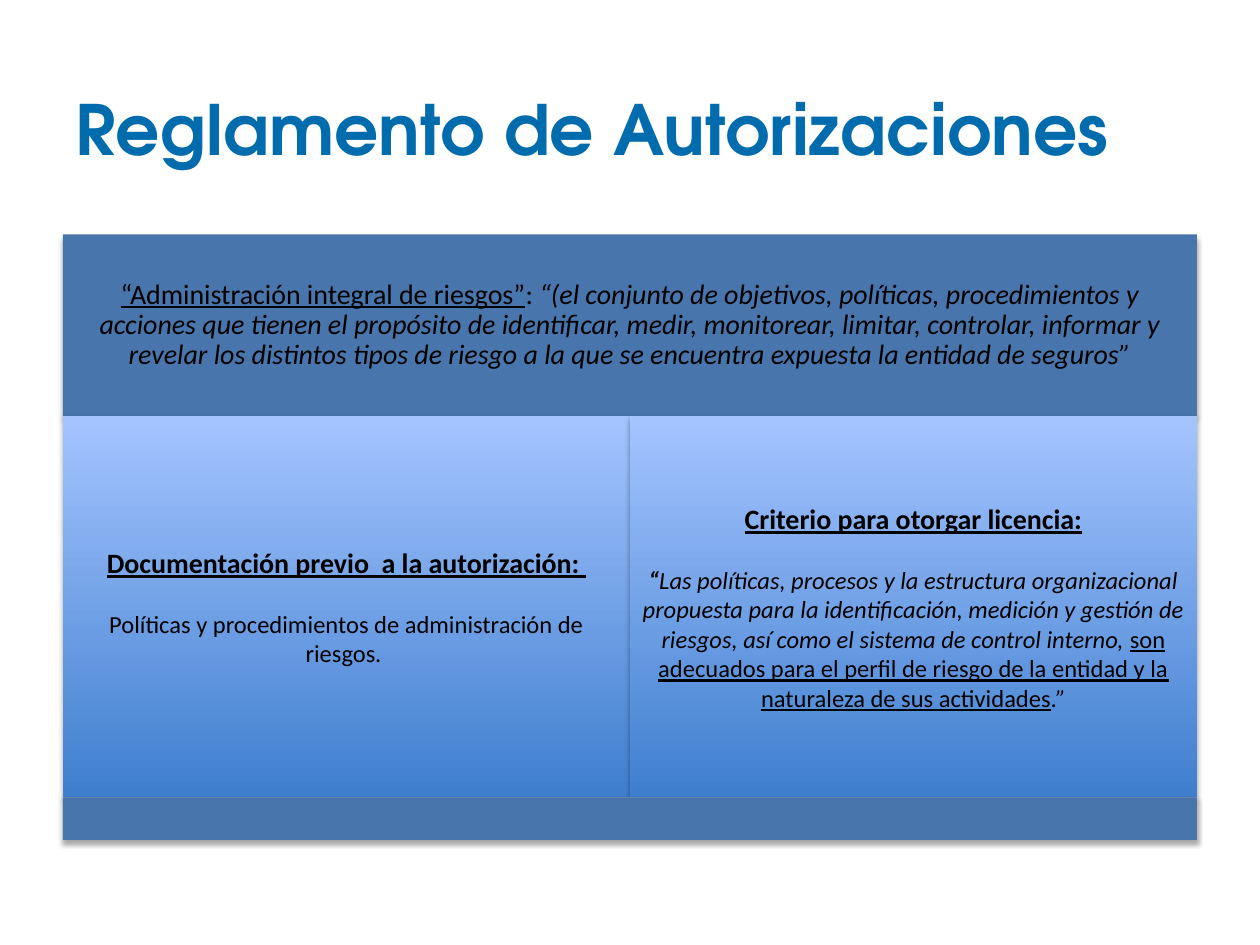
from lxml import etree
from pptx import Presentation
from pptx.dml.color import RGBColor
from pptx.enum import shapes, text
from pptx.oxml import ns
from pptx.util import Pt

COLORS = {"title": "006BAD", "band": "4875AC", "text": "000000",
          "dark": "3F7FCE", "light": "A4C4FF"}
LEFT, WIDTH = 36, 648
HALF = WIDTH / 2
TOP, HEAD_H, BODY_H, FOOT_H = 134, 103.7, 218, 24.3


def rgb(name):
    return RGBColor.from_string(COLORS[name])


def add_runs(p, runs):
    for words, fmt in runs:
        r = p.add_run()
        r.text = words
        r.font.name = "Calibri"
        r.font.color.rgb = rgb("text")
        for key, value in fmt.items():
            setattr(r.font, key, value)


prs = Presentation()
prs.slide_width, prs.slide_height = Pt(720), Pt(540)
s = prs.slides.add_slide(prs.slide_layouts[5])

# Title
title = s.shapes.title
title.left, title.top, title.width, title.height = Pt(36), Pt(21), Pt(648), Pt(104)
tf = title.text_frame
tf.vertical_anchor = text.MSO_ANCHOR.MIDDLE
p = tf.paragraphs[0]
p.alignment = text.PP_ALIGN.LEFT
r = p.add_run()
r.text = "Reglamento de Autorizaciones"
r.font.color.rgb = rgb("title")
for key, value in {"name": "TeX Gyre Adventor", "size": Pt(39.6), "bold": True}.items():
    setattr(r.font, key, value)

# Run formats
head = {"size": Pt(16), "bold": True, "underline": True}
plain16, plain14 = {"size": Pt(16)}, {"size": Pt(14)}
under16, under14 = {**plain16, "underline": True}, {**plain14, "underline": True}
italic16, italic14 = {**plain16, "italic": True}, {**plain14, "italic": True}

definition = [[
    ("“Administración integral de riesgos”", under16),
    (": ", plain16),
    ("“(el conjunto de objetivos, políticas, procedimientos y acciones que tienen "
     "el propósito de identificar, medir, monitorear, limitar, controlar, informar y "
     "revelar los distintos tipos de riesgo a la que se encuentra expuesta la entidad "
     "de seguros”", italic16),
]]
documents = [
    [("Documentación previo  a la autorización: ", head)],
    [("Políticas y procedimientos de administración de riesgos", plain14),
     (". ", italic14)],
]
criterion = [
    [("Criterio para otorgar licencia:", head)],
    [("“", {**italic14, "bold": True}),
     ("Las políticas, procesos y la estructura organizacional propuesta para la "
      "identificación, medición y gestión de riesgos, así como el sistema de control "
      "interno, ", italic14),
     ("son adecuados para el perfil de riesgo de la entidad y la naturaleza de sus "
      "actividades", under14),
     (".”", italic14)],
]

# Panels: header band, two gradient columns, footer band
body_top = TOP + HEAD_H
panels = [
    (LEFT, TOP, WIDTH, HEAD_H, "band", definition),
    (LEFT, body_top, HALF, BODY_H, "gradient", documents),
    (LEFT + HALF, body_top, HALF, BODY_H, "gradient", criterion),
    (LEFT, body_top + BODY_H, WIDTH, FOOT_H, "band", []),
]
for x, y, w, h, style, paragraphs in panels:
    sp = s.shapes.add_shape(shapes.MSO_SHAPE.RECTANGLE, Pt(x), Pt(y), Pt(w), Pt(h))
    sp.line.fill.background()
    if style == "gradient":
        sp.fill.gradient()
        sp.fill.gradient_angle = 90
        for stop, name, pos in zip(sp.fill.gradient_stops, ("dark", "light"), (0, 1)):
            stop.color.rgb = rgb(name)
            stop.position = pos
    else:
        sp.fill.solid()
        sp.fill.fore_color.rgb = rgb(style)

    # Soft shadow below the panel
    sp.shadow.inherit = False
    effects = sp._element.spPr.find(ns.qn("a:effectLst"))
    shadow = etree.SubElement(effects, ns.qn("a:outerShdw"), blurRad=str(Pt(3.1)),
                              dist=str(Pt(1.8)), dir="5400000", rotWithShape="0")
    color = etree.SubElement(shadow, ns.qn("a:srgbClr"), val=COLORS["text"])
    etree.SubElement(color, ns.qn("a:alpha"), val="35000")

    # Panel text
    tf = sp.text_frame
    tf.word_wrap = True
    tf.vertical_anchor = text.MSO_ANCHOR.MIDDLE
    for side in ("left", "right", "top", "bottom"):
        setattr(tf, "margin_" + side, Pt(5))
    for i, runs in enumerate(paragraphs):
        p = tf.add_paragraph() if i else tf.paragraphs[0]
        p.alignment = text.PP_ALIGN.CENTER
        if i:
            p.space_before = Pt(17)
        if paragraphs is definition:
            p.line_spacing = 0.9
        add_runs(p, runs)

prs.save("out.pptx")
